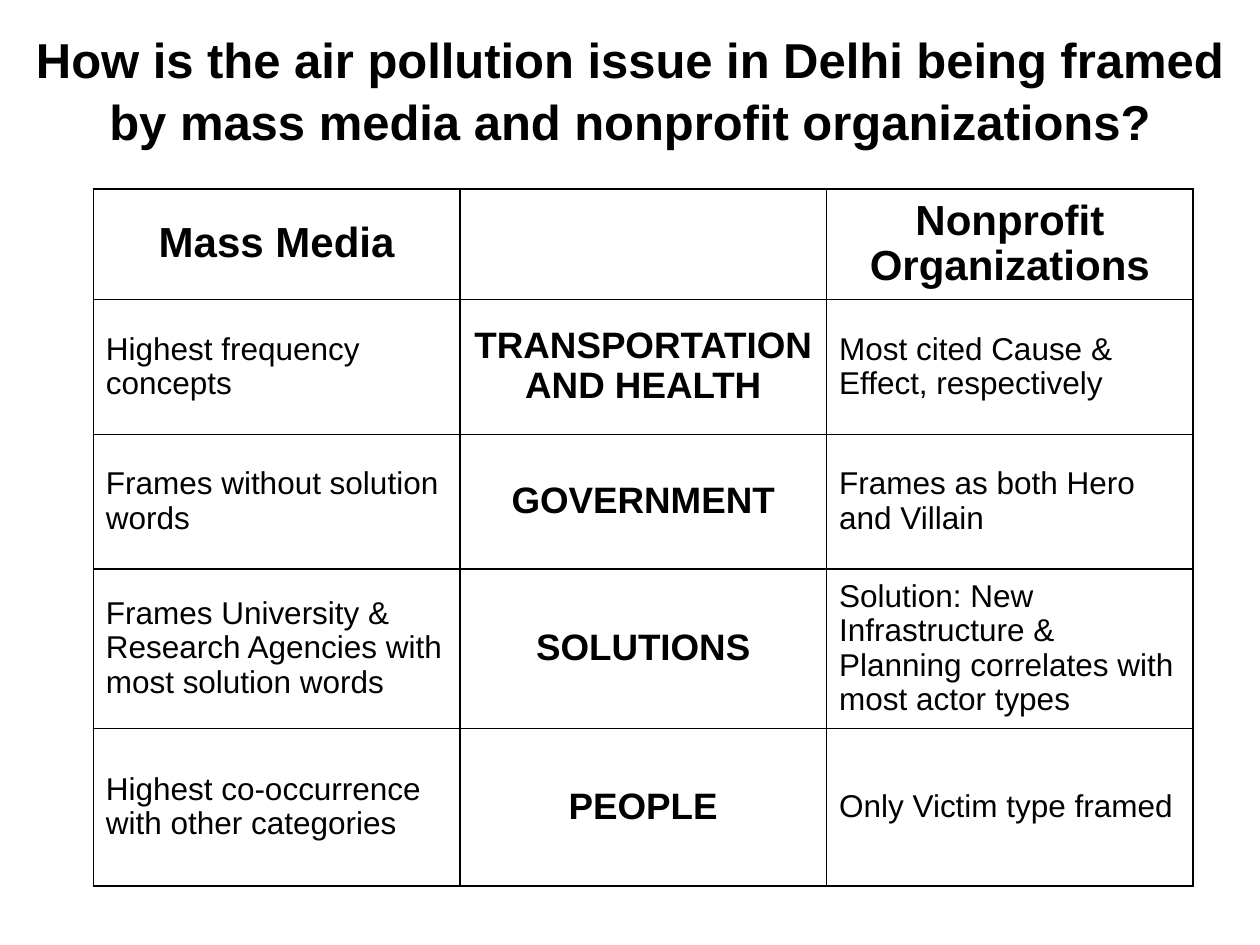
from lxml.etree import SubElement
from pptx import Presentation
from pptx.dml.color import RGBColor
from pptx.enum.text import MSO_ANCHOR, PP_ALIGN
from pptx.oxml.ns import qn
from pptx.util import Inches, Pt

# Content
TITLE = ("How is the air pollution issue in Delhi being framed "
         "by mass media and nonprofit organizations?")
ROWS = [
    ("Mass Media", "", "Nonprofit Organizations"),
    ("Highest frequency concepts", "TRANSPORTATION AND HEALTH",
     "Most cited Cause & Effect, respectively"),
    ("Frames without solution words", "GOVERNMENT",
     "Frames as both Hero and Villain"),
    ("Frames University & Research Agencies with most solution words", "SOLUTIONS",
     "Solution: New Infrastructure & Planning correlates with most actor types"),
    ("Highest co-occurrence with other categories", "PEOPLE",
     "Only Victim type framed"),
]
ROW_HEIGHTS = [0.84, 1.07, 1.07, 1.25, 1.25]
COLUMN_WIDTH = 2.91


class Theme:
    font = "Arial"
    ink = "000000"
    title, header, topic, body = 28, 24, 21, 18
    title_spacing, cell_spacing = 1.05, 0.97
    border = 1


def style(paragraph, size, bold, centred, spacing):
    paragraph.alignment = PP_ALIGN.CENTER if centred else PP_ALIGN.LEFT
    paragraph.line_spacing = spacing
    font = paragraph.font
    font.name, font.size, font.bold = Theme.font, Pt(size), bold
    font.color.rgb = RGBColor.from_string(Theme.ink)


def add_borders(cell):
    properties = cell._tc.get_or_add_tcPr()
    for side in ("a:lnL", "a:lnR", "a:lnT", "a:lnB"):
        line = SubElement(properties, qn(side), w=str(Pt(Theme.border)))
        fill = SubElement(line, qn("a:solidFill"))
        SubElement(fill, qn("a:srgbClr"), val=Theme.ink)


def add_title(page):
    box = page.shapes.add_textbox(Inches(0), Inches(0.2), Inches(10), Inches(1))
    frame = box.text_frame
    frame.word_wrap = True
    frame.vertical_anchor = MSO_ANCHOR.MIDDLE
    frame.text = TITLE
    style(frame.paragraphs[0], Theme.title, True, True, Theme.title_spacing)


def add_comparison(page):
    columns = len(ROWS[0])
    table = page.shapes.add_table(
        len(ROWS), columns, Inches(0.74), Inches(1.5),
        Inches(COLUMN_WIDTH * columns), Inches(sum(ROW_HEIGHTS))).table
    table.first_row = table.horz_banding = False
    for column in table.columns:
        column.width = Inches(COLUMN_WIDTH)
    for r, (texts, height) in enumerate(zip(ROWS, ROW_HEIGHTS)):
        table.rows[r].height = Inches(height)
        for c, text in enumerate(texts):
            cell = table.cell(r, c)
            cell.text = text
            cell.vertical_anchor = MSO_ANCHOR.MIDDLE
            add_borders(cell)
            cell.fill.background()
            # Headers and the middle topic column stand out
            strong = r == 0 or c == 1
            size = Theme.header if r == 0 else Theme.topic if c == 1 else Theme.body
            style(cell.text_frame.paragraphs[0], size, strong, strong, Theme.cell_spacing)


def main():
    deck = Presentation()
    deck.slide_width, deck.slide_height = Inches(10), Inches(7.5)
    page = deck.slides.add_slide(deck.slide_layouts[6])
    add_title(page)
    add_comparison(page)
    deck.save("out.pptx")


if __name__ == "__main__":
    main()
